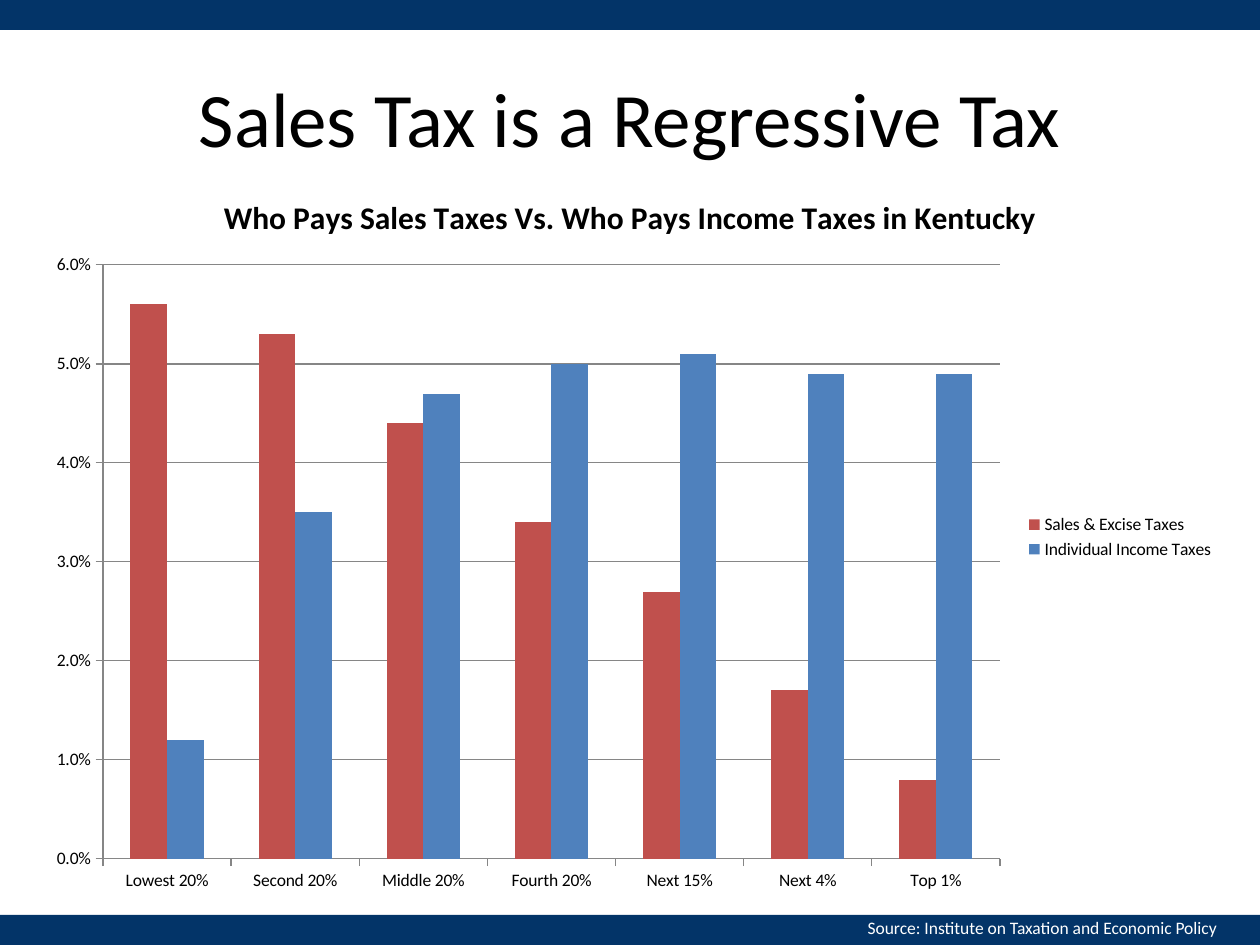
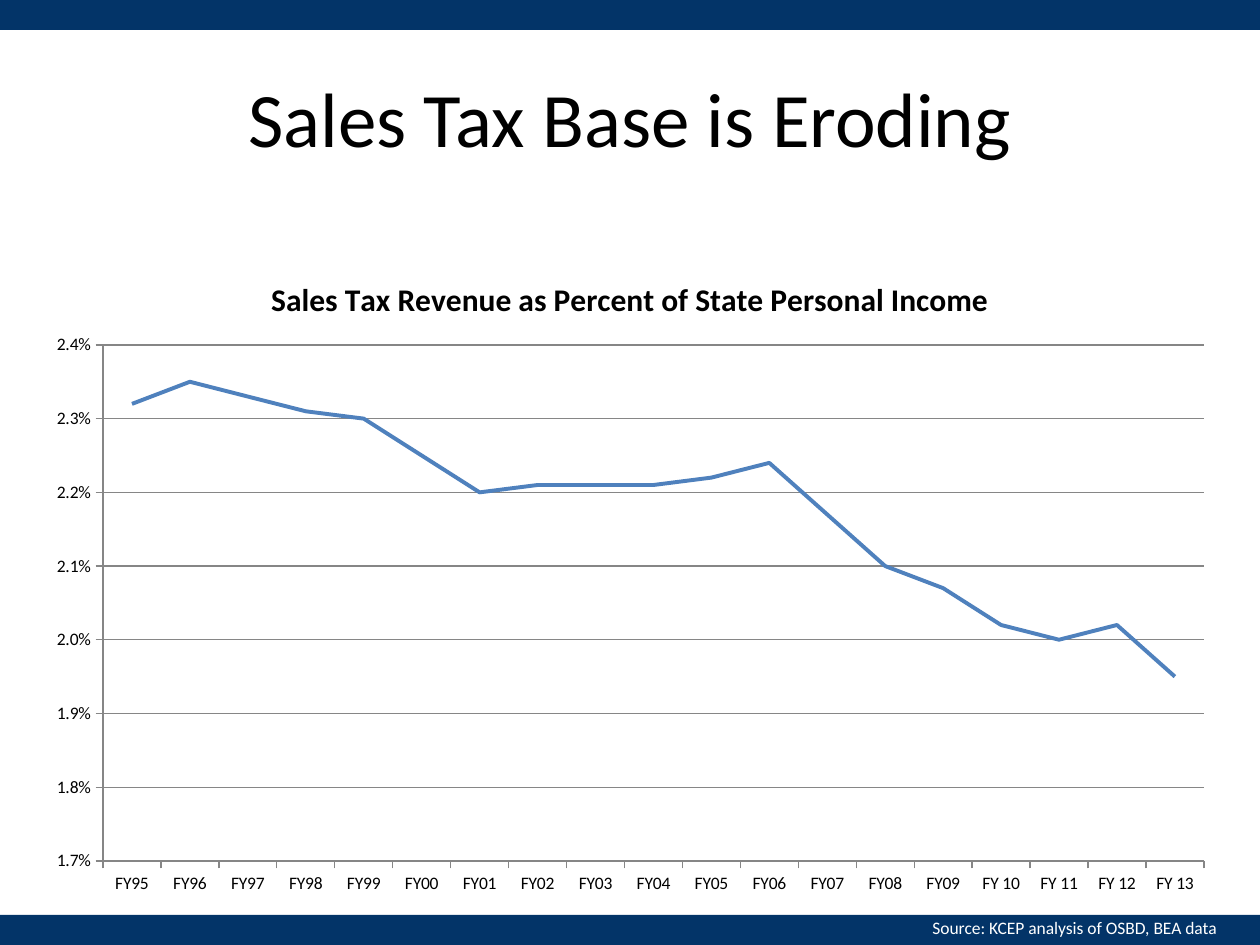
"""Build two slides of charts on sales tax."""
from lxml.etree import SubElement
from pptx import Presentation
from pptx.chart.data import CategoryChartData
from pptx.dml.color import RGBColor
from pptx.enum.chart import XL_CHART_TYPE as ChartType, XL_LEGEND_POSITION as LegendPosition
from pptx.enum.chart import XL_MARKER_STYLE as MarkerStyle, XL_TICK_MARK as TickMark
from pptx.enum.shapes import MSO_SHAPE as ShapeType
from pptx.enum.text import MSO_ANCHOR as Anchor, PP_ALIGN as Align
from pptx.oxml.ns import qn
from pptx.util import Emu, Pt

PX_PER_INCH = 126
WIDTH, HEIGHT = 1260, 945
BAND_HEIGHT = 30
TITLE_BOX = (63, 38, 1134, 158)
SOURCE_BOX = (504, 911, 725, 34)
FONT = "Calibri"
NAVY, BLACK, WHITE, GRAY = "033468", "000000", "FFFFFF", "868686"
RED, BLUE = "C0504D", "4F81BD"

SLIDES = [
    {
        "title": "Sales Tax is a Regressive Tax",
        "source": "Source: Institute on Taxation and Economic Policy",
        "chart_title": "Who Pays Sales Taxes Vs. Who Pays Income Taxes in Kentucky",
        "type": ChartType.COLUMN_CLUSTERED,
        "box": (33, 168, 1194, 738),
        "plot": (103, 265, 897, 594),
        "scale": (0, 0.06, 0.01),
        "legend": True,
        "categories": ["Lowest 20%", "Second 20%", "Middle 20%", "Fourth 20%",
                       "Next 15%", "Next 4%", "Top 1%"],
        "series": [
            ("Sales & Excise Taxes", RED,
             [0.056, 0.053, 0.044, 0.034, 0.027, 0.017, 0.008]),
            ("Individual Income Taxes", BLUE,
             [0.012, 0.035, 0.047, 0.05, 0.051, 0.049, 0.049]),
        ],
    },
    {
        "title": "Sales Tax Base is Eroding",
        "source": "Source: KCEP analysis of OSBD, BEA data",
        "chart_title": "Sales Tax Revenue as Percent of State Personal Income",
        "type": ChartType.LINE,
        "box": (32, 252, 1196, 654),
        "plot": (103, 345, 1101, 516),
        "scale": (0.017, 0.024, 0.001),
        "legend": False,
        "categories": ["FY95", "FY96", "FY97", "FY98", "FY99", "FY00", "FY01",
                       "FY02", "FY03", "FY04", "FY05", "FY06", "FY07", "FY08",
                       "FY09", "FY 10", "FY 11", "FY 12", "FY 13"],
        "series": [
            ("Series 1", BLUE,
             [0.0232, 0.0235, 0.0233, 0.0231, 0.023, 0.0225, 0.022, 0.0221,
              0.0221, 0.0221, 0.0222, 0.0224, 0.0217, 0.021, 0.0207, 0.0202,
              0.02, 0.0202, 0.0195]),
        ],
    },
]


def px(length):
    return Emu(round(length * 914400 / PX_PER_INCH))


def place(box):
    return [px(length) for length in box]


def color(value):
    return RGBColor.from_string(value)


def style_font(font, size, value, bold=False):
    font.name, font.size, font.bold = FONT, Pt(size), bold
    font.color.rgb = color(value)


def write(text_frame, text, size, value, align, bold=False):
    paragraph = text_frame.paragraphs[0]
    paragraph.alignment = align
    run = paragraph.add_run()
    run.text = text
    style_font(run.font, size, value, bold)


def add_band(slide, top):
    band = slide.shapes.add_shape(ShapeType.RECTANGLE, *place((0, top, WIDTH, BAND_HEIGHT)))
    band.shadow.inherit = False
    band.fill.solid()
    band.fill.fore_color.rgb = color(NAVY)
    band.line.fill.background()


def add_title(slide, text):
    title = slide.shapes.title
    title.left, title.top, title.width, title.height = place(TITLE_BOX)
    title.text_frame.vertical_anchor = Anchor.MIDDLE
    write(title.text_frame, text, 44, BLACK, Align.CENTER)


def add_source(slide, text):
    text_frame = slide.shapes.add_textbox(*place(SOURCE_BOX)).text_frame
    text_frame.word_wrap = True
    write(text_frame, text, 10, WHITE, Align.RIGHT)


def set_plot_area(chart, box, plot):
    """Fix the inner plot area as fractions of the chart box."""
    plot_area = chart.element.find(".//" + qn("c:plotArea"))
    layout = plot_area.find(qn("c:layout"))
    if layout is None:
        layout = plot_area.makeelement(qn("c:layout"), {})
        plot_area.insert(0, layout)
    manual = SubElement(layout, qn("c:manualLayout"))
    left, top, width, height = box
    x, y, plot_width, plot_height = plot
    settings = [
        ("layoutTarget", "inner"), ("xMode", "edge"), ("yMode", "edge"),
        ("x", (x - left) / width), ("y", (y - top) / height),
        ("w", plot_width / width), ("h", plot_height / height),
    ]
    for name, value in settings:
        SubElement(manual, qn("c:" + name), val=str(value))


def style_axes(chart, scale):
    value_axis = chart.value_axis
    value_axis.minimum_scale, value_axis.maximum_scale, value_axis.major_unit = scale
    value_axis.has_major_gridlines = True
    value_axis.major_gridlines.format.line.color.rgb = color(GRAY)
    value_axis.tick_labels.number_format = "0.0%"
    value_axis.tick_labels.number_format_is_linked = False
    for axis in (value_axis, chart.category_axis):
        axis.major_tick_mark = TickMark.OUTSIDE
        axis.format.line.color.rgb = color(GRAY)


def style_series(chart, content):
    plot = chart.plots[0]
    plot.vary_by_categories = False
    is_line = content["type"] == ChartType.LINE
    if not is_line:
        plot.gap_width = 150
    for series, (_, value, _) in zip(plot.series, content["series"]):
        if is_line:
            series.smooth = False
            series.marker.style = MarkerStyle.NONE
            series.format.line.width = Pt(2.25)
            series.format.line.color.rgb = color(value)
        else:
            series.format.fill.solid()
            series.format.fill.fore_color.rgb = color(value)


def add_chart(slide, content):
    data = CategoryChartData(number_format="0.0%")
    data.categories = content["categories"]
    for name, _, values in content["series"]:
        data.add_series(name, values)
    chart = slide.shapes.add_chart(content["type"], *place(content["box"]), data).chart
    style_font(chart.font, 10, BLACK)
    chart.has_title = True
    write(chart.chart_title.text_frame, content["chart_title"], 18, BLACK, Align.CENTER, True)
    chart.chart_title.include_in_layout = False
    chart.has_legend = content["legend"]
    if chart.has_legend:
        chart.legend.position = LegendPosition.RIGHT
        chart.legend.include_in_layout = False
    style_axes(chart, content["scale"])
    style_series(chart, content)
    set_plot_area(chart, content["box"], content["plot"])


def main():
    presentation = Presentation()
    presentation.slide_width, presentation.slide_height = px(WIDTH), px(HEIGHT)
    title_only = presentation.slide_layouts[5]
    for content in SLIDES:
        slide = presentation.slides.add_slide(title_only)
        for top in (HEIGHT - BAND_HEIGHT, 0):
            add_band(slide, top)
        add_title(slide, content["title"])
        add_chart(slide, content)
        add_source(slide, content["source"])
    presentation.save("out.pptx")


if __name__ == "__main__":
    main()
